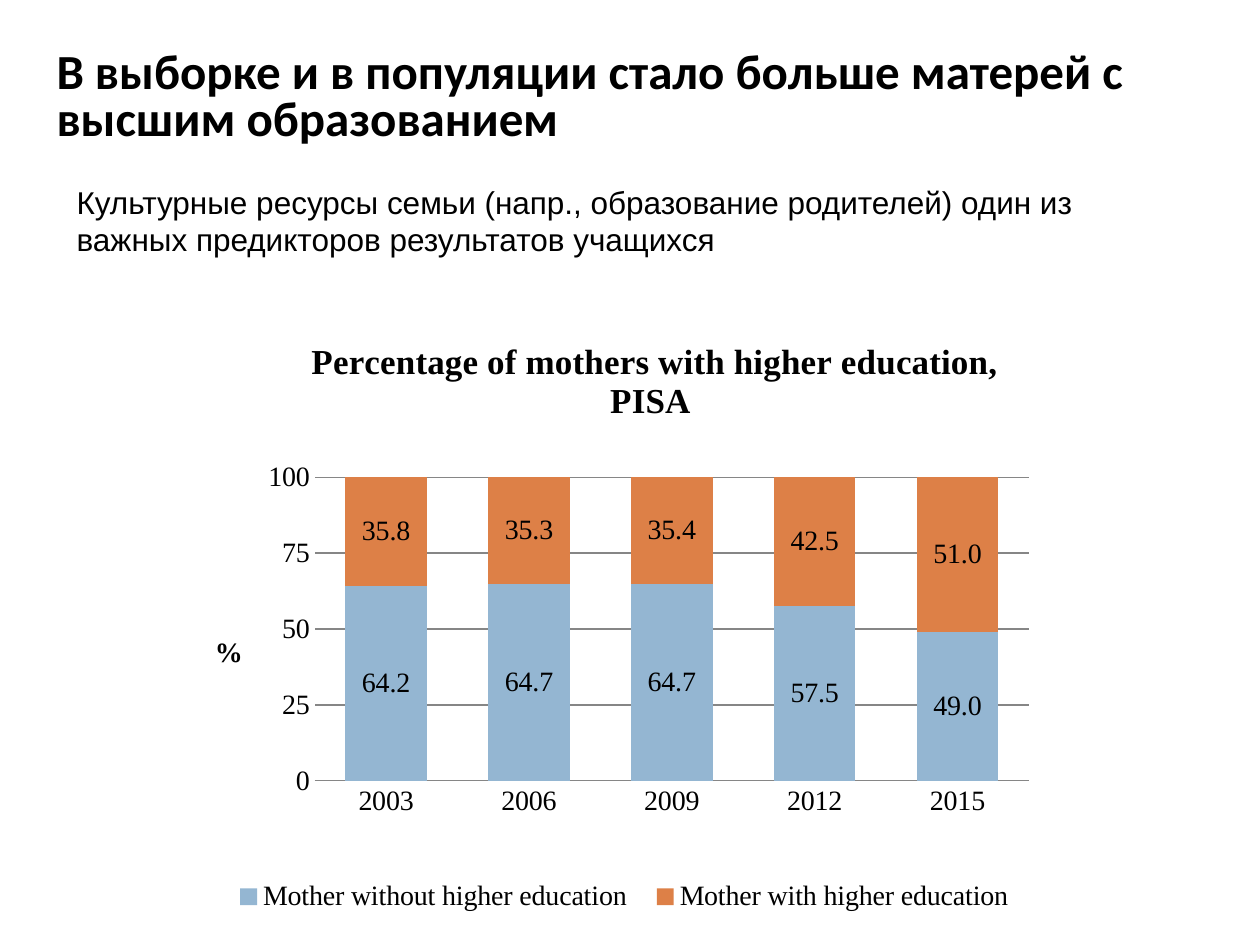
"""Build a slide on the share of mothers with higher education."""
from lxml import etree
from pptx import Presentation
from pptx.chart.data import CategoryChartData
from pptx.dml.color import RGBColor
from pptx.enum.chart import (XL_CHART_TYPE, XL_LABEL_POSITION as POS,
                             XL_LEGEND_POSITION as LEG, XL_TICK_MARK as TICK)
from pptx.enum.text import MSO_ANCHOR
from pptx.oxml.ns import qn
from pptx.util import Inches, Pt


def style(font, name, size, bold=False, color="000000"):
    font.name = name
    font.size = Pt(size)
    font.bold = bold
    font.color.rgb = RGBColor.from_string(color)


def place(el, **values):
    for old in el.findall(qn("c:layout")):
        el.remove(old)
    layout = etree.Element(qn("c:layout"))
    manual = etree.SubElement(layout, qn("c:manualLayout"))
    for tag, val in values.items():
        etree.SubElement(manual, qn("c:" + tag)).set("val", str(val))
    overlay = el.find(qn("c:overlay"))
    if overlay is None:
        el.insert(0, layout)
    else:
        overlay.addprevious(layout)


prs = Presentation()
prs.slide_width, prs.slide_height = Inches(10), Inches(7.5)
s = prs.slides.add_slide(prs.slide_layouts[6])

data = CategoryChartData(number_format="0.0")
data.categories = ["2003", "2006", "2009", "2012", "2015"]
data.add_series("Mother without higher education", [64.2, 64.7, 64.7, 57.5, 49.0])
data.add_series("Mother with higher education", [35.8, 35.3, 35.4, 42.5, 51.0])
chart = s.shapes.add_chart(XL_CHART_TYPE.COLUMN_STACKED, Inches(0.91), Inches(2.41),
                           Inches(7.56), Inches(5.74), data).chart
FONT = "Times New Roman"
style(chart.font, FONT, 16)

chart.has_title = True
r = chart.chart_title.text_frame.paragraphs[0].add_run()
r.text = "Percentage of mothers with higher education, PISA "
style(r.font, FONT, 20, True)
place(chart.chart_title._element, xMode="edge", yMode="edge", x=0.2, y=0.04)

plot = chart.plots[0]
plot.gap_width, plot.overlap = 75, 100
plot.vary_by_categories = False
for series, color in zip(plot.series, ["94B6D2", "DD8047"]):
    series.format.fill.solid()
    series.format.fill.fore_color.rgb = RGBColor.from_string(color)
    labels = series.data_labels
    labels.show_value = True
    labels.position = POS.CENTER
    labels.number_format, labels.number_format_is_linked = "0.0", False
    style(labels.font, FONT, 16)

cat, val = chart.category_axis, chart.value_axis
for axis in (cat, val):
    axis.major_tick_mark = axis.minor_tick_mark = TICK.NONE
    style(axis.tick_labels.font, FONT, 16)
for line in (cat.format.line, val.major_gridlines.format.line):
    line.color.rgb = RGBColor.from_string("868686")
    line.width = Pt(0.75)
val.format.line.fill.background()
val.minimum_scale, val.maximum_scale, val.major_unit = 0, 100, 25
val.tick_labels.number_format = "0"
val.tick_labels.number_format_is_linked = False
title = val.axis_title
r = title.text_frame.paragraphs[0].add_run()
r.text = "%"
style(r.font, FONT, 16, True)
body = title._element.find(".//" + qn("a:bodyPr"))
body.set("rot", "0")
body.set("vert", "horz")
place(title._element, xMode="edge", yMode="edge", x=0.1, y=0.45)

chart.has_legend = True
chart.legend.position = LEG.BOTTOM
chart.legend.include_in_layout = False
style(chart.legend.font, FONT, 16)
place(chart.legend._element, xMode="edge", yMode="edge", x=0.11, y=0.78, w=0.85, h=0.08)
place(cat._element.getparent(), layoutTarget="inner", xMode="edge", yMode="edge",
      x=0.21, y=0.24, w=0.75, h=0.42)

for text, box, name, size, bold, spacing, anchor in [
    ("В выборке и в популяции стало больше матерей с высшим образованием",
     (0.35, 0.32, 9.45, 0.93), "Calibri", 28, True, 0.8, MSO_ANCHOR.MIDDLE),
    ("Культурные ресурсы семьи (напр., образование родителей) один из важных "
     "предикторов результатов учащихся",
     (0.51, 1.4, 8.74, 0.71), "Arial", 18, False, 1.0, MSO_ANCHOR.TOP),
]:
    tf = s.shapes.add_textbox(*map(Inches, box)).text_frame
    tf.word_wrap = True
    tf.vertical_anchor = anchor
    p = tf.paragraphs[0]
    p.line_spacing = spacing
    r = p.add_run()
    r.text = text
    style(r.font, name, size, bold)

prs.save("out.pptx")
